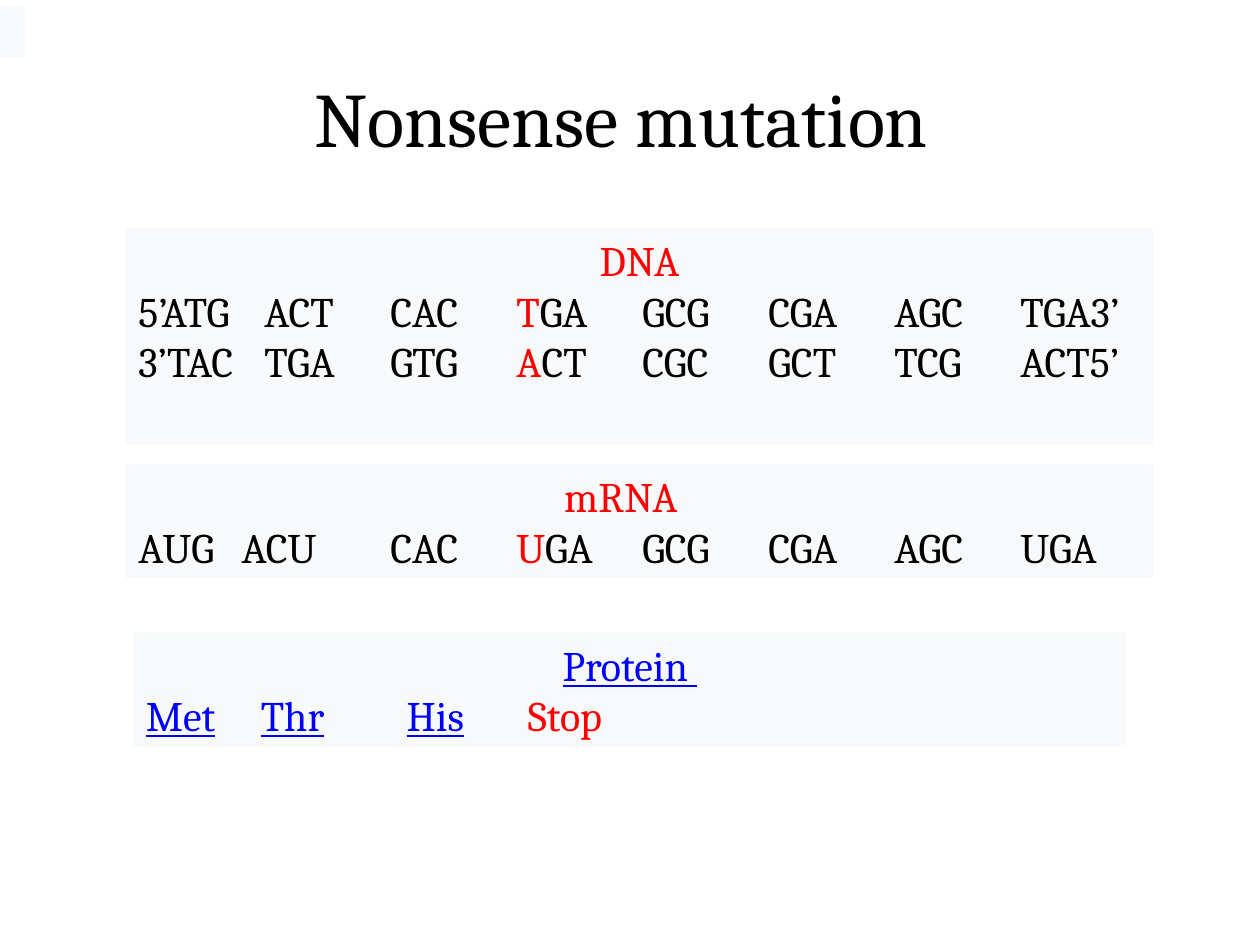
from lxml import etree
from pptx import Presentation
from pptx.dml.color import RGBColor
from pptx.enum.shapes import MSO_SHAPE
from pptx.enum.text import MSO_ANCHOR, PP_ALIGN
from pptx.oxml.ns import qn
from pptx.util import Cm, Pt

RECTANGLE = MSO_SHAPE.RECTANGLE
CENTER, LEFT = PP_ALIGN.CENTER, PP_ALIGN.LEFT
TOP, MIDDLE = MSO_ANCHOR.TOP, MSO_ANCHOR.MIDDLE
TITLE_ONLY = 5

THEME = {
    "font": "Cambria",
    "title_size": 44,
    "body_size": 24,
    "panel": "F8F9FA",
    "plain": "000000",
    "mutated": "FF0000",
    "linked": "0000FF",
}

TITLE = "Nonsense mutation "
CODON_STOPS = [2.54 * column for column in range(1, 8)]

# Boxes are left, top, width, height in cm; rows hold (text, style) runs.
PANELS = [
    {
        "box": (2.54, 4.6, 20.7, 4.37),
        "anchor": TOP,
        "right_inset": 0.25,
        "stops": CODON_STOPS,
        "heading": ("DNA", "mutated"),
        "rows": [
            [("5’ATG\tACT\tCAC\t", "plain"), ("T", "mutated"),
             ("GA\tGCG\tCGA\tAGC\tTGA3’", "plain")],
            [("3’TAC\tTGA\tGTG\t", "plain"), ("A", "mutated"),
             ("CT\tCGC\tGCT\tTCG\tACT5’", "plain")],
        ],
    },
    {
        "box": (2.54, 9.35, 20.7, 2.31),
        "anchor": MIDDLE,
        "right_inset": 1.0,
        "stops": [2.08] + CODON_STOPS[1:],
        "heading": ("mRNA", "mutated"),
        "rows": [
            [("AUG\tACU\tCAC\t", "plain"), ("U", "mutated"),
             ("GA\tGCG\tCGA\tAGC\tUGA", "plain")],
        ],
    },
    {
        "box": (2.69, 12.75, 20.02, 2.31),
        "anchor": MIDDLE,
        "right_inset": 0.25,
        "stops": [2.32, 5.26, 7.7],
        "heading": ("Protein ", "linked"),
        "rows": [
            [("Met", "linked"), ("\t", "plain"), ("Thr", "linked"),
             ("\t", "plain"), ("His", "linked"), ("\t", "plain"),
             ("Stop", "mutated")],
        ],
    },
]
CORNER_BOX = (0, 0.13, 0.51, 1.02)


def add_run(paragraph, text, style, size):
    run = paragraph.add_run()
    run.text = text
    run.font.name = THEME["font"]
    run.font.size = Pt(size)
    run.font.color.rgb = RGBColor.from_string(THEME[style])
    if style == "linked":
        run.font.underline = True


def set_tab_stops(paragraph, stops):
    tab_list = etree.SubElement(paragraph._p.get_or_add_pPr(), qn("a:tabLst"))
    for stop in stops:
        etree.SubElement(tab_list, qn("a:tab"), pos=str(Cm(stop)), algn="l")


def add_rectangle(slide, box):
    shape = slide.shapes.add_shape(RECTANGLE, *map(Cm, box))
    shape.shadow.inherit = False
    shape.fill.solid()
    shape.fill.fore_color.rgb = RGBColor.from_string(THEME["panel"])
    shape.line.fill.background()
    return shape


def add_panel(slide, panel):
    frame = add_rectangle(slide, panel["box"]).text_frame
    frame.word_wrap = True
    frame.vertical_anchor = panel["anchor"]
    frame.margin_left, frame.margin_right = Cm(0.25), Cm(panel["right_inset"])
    frame.margin_top = frame.margin_bottom = Cm(0.13)
    heading = frame.paragraphs[0]
    heading.alignment = CENTER
    add_run(heading, *panel["heading"], THEME["body_size"])
    for row in panel["rows"]:
        paragraph = frame.add_paragraph()
        paragraph.alignment = LEFT
        set_tab_stops(paragraph, panel["stops"])
        for text, style in row:
            add_run(paragraph, text, style, THEME["body_size"])


def add_title(slide):
    title = slide.shapes.title
    title.left, title.top, title.width, title.height = map(
        Cm, (1.27, 0.76, 22.86, 3.18))
    title.text_frame.vertical_anchor = MIDDLE
    paragraph = title.text_frame.paragraphs[0]
    paragraph.alignment = CENTER
    add_run(paragraph, TITLE, "plain", THEME["title_size"])


def main():
    presentation = Presentation()
    presentation.slide_width, presentation.slide_height = Cm(25.4), Cm(19.05)
    slide = presentation.slides.add_slide(
        presentation.slide_layouts[TITLE_ONLY])
    add_title(slide)
    add_rectangle(slide, CORNER_BOX)
    for panel in PANELS:
        add_panel(slide, panel)
    presentation.save("out.pptx")


if __name__ == "__main__":
    main()
